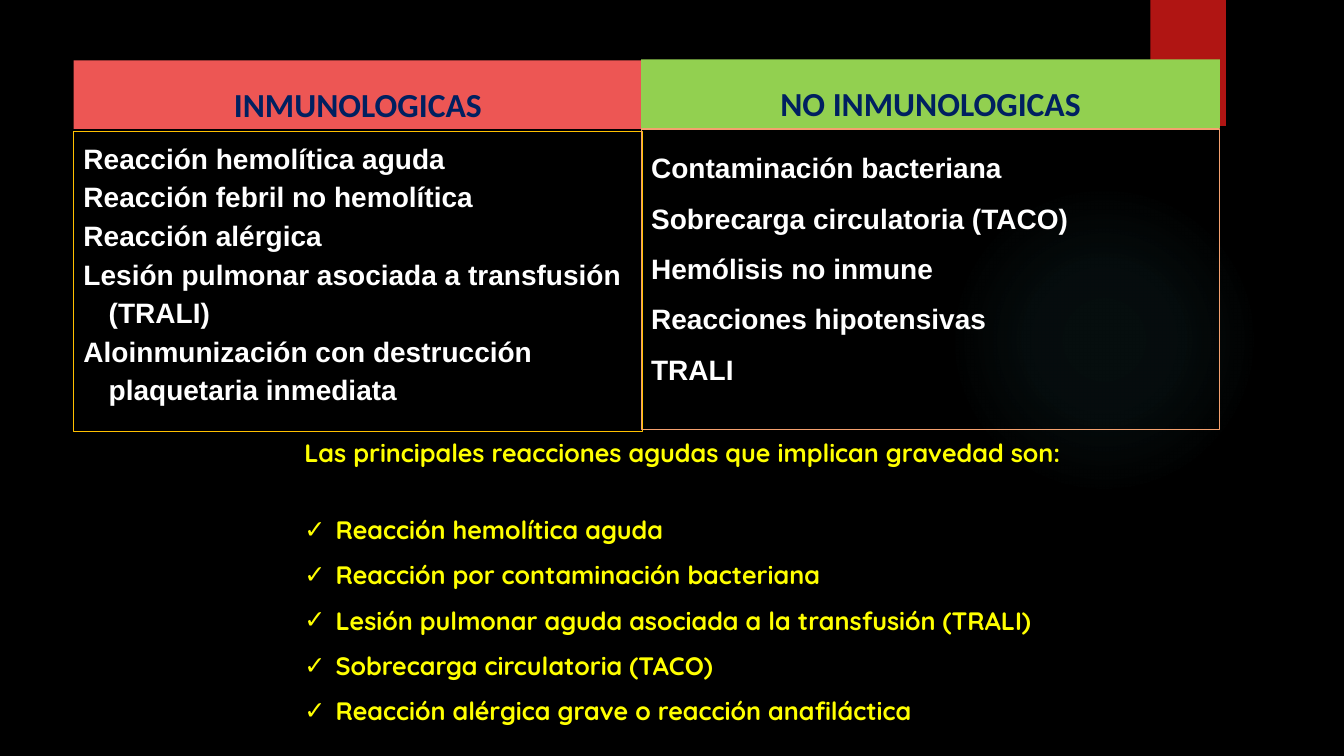
from lxml import etree
from pptx import Presentation
from pptx.dml.color import RGBColor
from pptx.enum.shapes import MSO_SHAPE as SHAPE
from pptx.enum.text import MSO_ANCHOR as ANCHOR, PP_ALIGN as ALIGN
from pptx.oxml import parse_xml
from pptx.oxml.ns import nsdecls, qn
from pptx.util import Inches, Pt


def rgb(value):
    return RGBColor.from_string(value)


def write(tf, lines, color, indent=0, bullet=None, align=ALIGN.LEFT, **formats):
    tf.word_wrap = True
    for i, line in enumerate(lines):
        p = tf.paragraphs[0] if i == 0 else tf.add_paragraph()
        pPr = p._p.get_or_add_pPr()
        if indent:
            pPr.set("marL", str(Inches(indent)))
            pPr.set("indent", str(-Inches(indent)))
        if bullet:
            etree.SubElement(pPr, qn("a:buFont")).set("typeface", "Arial")
            etree.SubElement(pPr, qn("a:buChar")).set("char", bullet)
        p.alignment = align
        p.line_spacing = formats.get("spacing", 1.0)
        r = p.add_run()
        r.text = line
        r.font.color.rgb = rgb(color)
        for name in ("name", "size", "bold"):
            setattr(r.font, name, formats[name])


prs = Presentation()
prs.slide_width, prs.slide_height = Inches(13.33), Inches(7.5)
s = prs.slides.add_slide(prs.slide_layouts[6])
s.background.fill.solid()
s.background.fill.fore_color.rgb = rgb("000000")

glow = s.shapes.add_shape(SHAPE.OVAL, Inches(9.41), Inches(1.83), Inches(3.08), Inches(3.08))
glow.shadow.inherit = False
glow.line.fill.background()
stops = "".join(
    f'<a:gs pos="{pos}000"><a:srgbClr val="50B9C1"><a:alpha val="{alpha}000"/></a:srgbClr></a:gs>'
    for pos, alpha in ((0, 7), (36, 6), (69, 0))
)
glow._element.spPr.insert(2, parse_xml(
    f'<a:gradFill {nsdecls("a")}><a:gsLst>{stops}</a:gsLst><a:path path="circle">'
    '<a:fillToRect l="50000" t="50000" r="50000" b="50000"/></a:path></a:gradFill>'
))

ribbon = s.shapes.add_shape(SHAPE.RECTANGLE, Inches(11.41), 0, Inches(0.75), Inches(1.25))
ribbon.shadow.inherit = False
ribbon.fill.solid()
ribbon.fill.fore_color.rgb = rgb("B01513")
ribbon.line.fill.background()

columns = [
    dict(title="INMUNOLOGICAS", left=0.73, width=5.64, title_top=0.6, list_top=1.3,
         fill="ED5654", border="FFC000", spacing=1.15, items=[
             "Reacción hemolítica aguda",
             "Reacción febril no hemolítica",
             "Reacción alérgica",
             "Lesión pulmonar asociada a transfusión (TRALI)",
             "Aloinmunización con destrucción plaquetaria inmediata"]),
    dict(title="NO INMUNOLOGICAS", left=6.36, width=5.74, title_top=0.59, list_top=1.28,
         fill="92D050", border="F4A16F", spacing=1.5, items=[
             "Contaminación bacteriana",
             "Sobrecarga circulatoria (TACO)",
             "Hemólisis no inmune",
             "Reacciones hipotensivas",
             "TRALI"]),
]
for col in columns:
    left, width = Inches(col["left"]), Inches(col["width"])
    box = s.shapes.add_shape(SHAPE.RECTANGLE, left, Inches(col["list_top"]), width, Inches(2.98))
    box.shadow.inherit = False
    box.fill.background()
    box.line.color.rgb = rgb(col["border"])
    box.line.width = Pt(0.75)
    box.text_frame.vertical_anchor = ANCHOR.TOP
    write(box.text_frame, col["items"], "FFFFFF", indent=0.25, spacing=col["spacing"],
          name="Arial", size=Pt(20), bold=True)

    head = s.shapes.add_shape(SHAPE.RECTANGLE, left, Inches(col["title_top"]), width, Inches(0.68))
    head.shadow.inherit = False
    head.fill.solid()
    head.fill.fore_color.rgb = rgb(col["fill"])
    head.line.fill.background()
    head.text_frame.vertical_anchor = ANCHOR.BOTTOM
    write(head.text_frame, [col["title"]], "002060", align=ALIGN.CENTER,
          name="Calibri", size=Pt(24), bold=True)

severe = [
    "Reacción hemolítica aguda",
    "Reacción por contaminación bacteriana",
    "Lesión pulmonar aguda asociada a la transfusión (TRALI)",
    "Sobrecarga circulatoria (TACO)",
    "Reacción alérgica grave o reacción anafiláctica",
]
tf = s.shapes.add_textbox(Inches(2.92), Inches(4.29), Inches(7.99), Inches(2.98)).text_frame
quicksand = dict(name="Quicksand", size=Pt(18), bold=True)
write(tf, ["Las principales reacciones agudas que implican gravedad son:"], "FFFF00", **quicksand)
tf.paragraphs[0].space_after = Pt(22.5)
for item in severe:
    p = tf.add_paragraph()
    pPr = p._p.get_or_add_pPr()
    pPr.set("marL", str(Inches(0.31)))
    pPr.set("indent", str(-Inches(0.31)))
    etree.SubElement(pPr, qn("a:buFont")).set("typeface", "Arial")
    etree.SubElement(pPr, qn("a:buChar")).set("char", "✓")
    p.line_spacing = 1.5
    r = p.add_run()
    r.text = item
    r.font.color.rgb = rgb("FFFF00")
    for name, value in quicksand.items():
        setattr(r.font, name, value)

prs.save("out.pptx")
